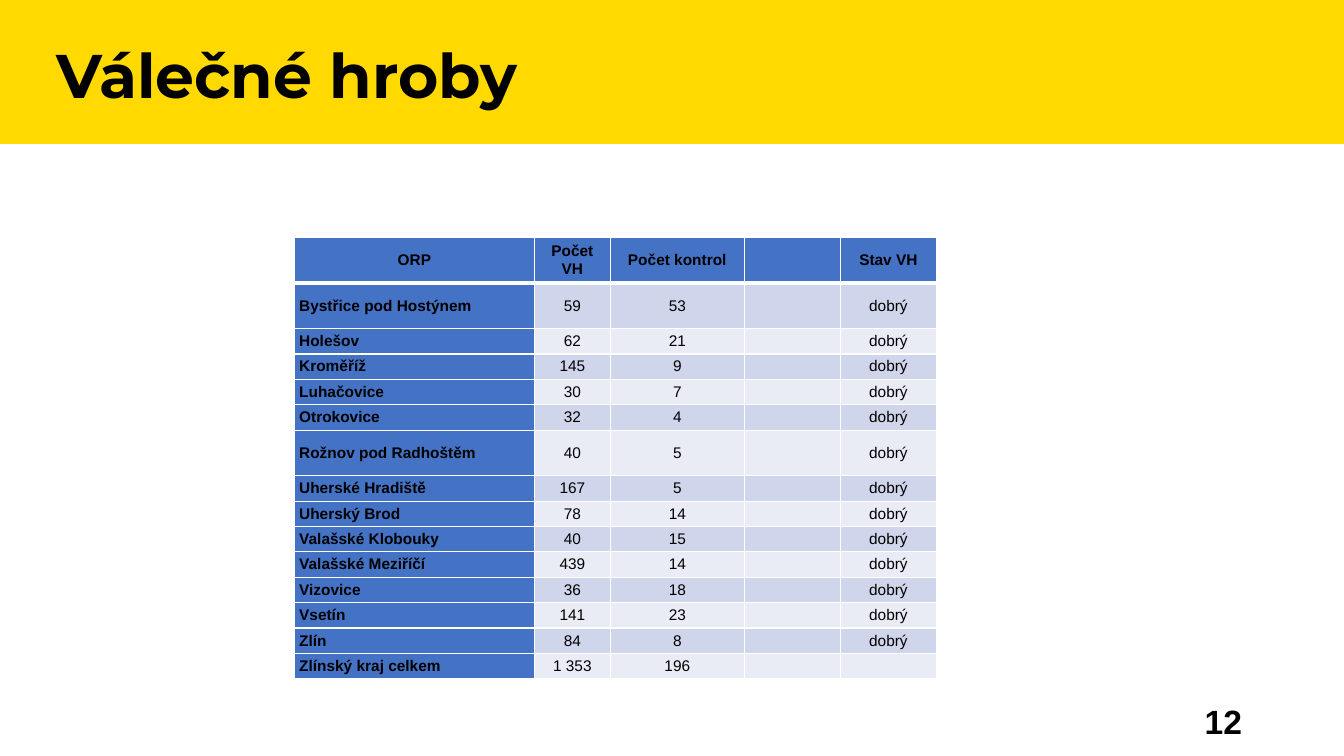
from dataclasses import dataclass

from lxml.etree import SubElement
from pptx import Presentation
from pptx.dml.color import RGBColor
from pptx.enum.shapes import MSO_SHAPE
from pptx.enum.text import MSO_ANCHOR, MSO_AUTO_SIZE, PP_ALIGN
from pptx.oxml.ns import qn
from pptx.util import Cm, Pt


@dataclass(frozen=True)
class Theme:
    yellow: str = "FFD900"
    black: str = "000000"
    white: str = "FFFFFF"
    blue: str = "4472C4"
    bands: tuple = ("CFD5EA", "E9EBF5")
    title_font: str = "Montserrat"
    body_font: str = "Arial"
    title_size: int = 44
    number_size: int = 24
    table_size: int = 11
    thin_border: int = 1
    header_border: int = 3


THEME = Theme()

HEADINGS = ("ORP", "Počet VH", "Počet kontrol", "", "Stav VH")
GRAVES = (
    ("Bystřice pod Hostýnem", "59", "53"),
    ("Holešov", "62", "21"),
    ("Kroměříž", "145", "9"),
    ("Luhačovice", "30", "7"),
    ("Otrokovice", "32", "4"),
    ("Rožnov pod Radhoštěm", "40", "5"),
    ("Uherské Hradiště", "167", "5"),
    ("Uherský Brod", "78", "14"),
    ("Valašské Klobouky", "40", "15"),
    ("Valašské Meziříčí", "439", "14"),
    ("Vizovice", "36", "18"),
    ("Vsetín", "141", "23"),
    ("Zlín", "84", "8"),
)
TOTAL = ("Zlínský kraj celkem", "1 353", "196", "", "")
COLUMN_WIDTHS = (6.05, 1.91, 3.38, 2.42, 2.42)
TALL_ROWS = (0, 1, 6)


def format_text(paragraph, font_name, size, bold, align):
    paragraph.alignment = align
    for run in paragraph.runs:
        run.font.name = font_name
        run.font.size = Pt(size)
        run.font.bold = bold
        run.font.color.rgb = RGBColor.from_string(THEME.black)


def add_heading(slide, left, top, width, height, text):
    # Yellow band behind the title
    band = slide.shapes.add_shape(
        MSO_SHAPE.RECTANGLE, Cm(left), Cm(top), Cm(width), Cm(height))
    band.shadow.inherit = False
    band.fill.solid()
    band.fill.fore_color.rgb = RGBColor.from_string(THEME.yellow)
    band.line.fill.background()

    # Title, brought in front of the band
    title = slide.shapes.title
    band._element.addnext(title._element)
    title.left, title.top = Cm(left + 1.17), Cm(top + 1.02)
    title.width, title.height = Cm(width - 2.57), Cm(height - 1.04)
    frame = title.text_frame
    frame.text = text
    frame.auto_size = MSO_AUTO_SIZE.NONE
    frame.vertical_anchor = MSO_ANCHOR.TOP
    frame.paragraphs[0].line_spacing = 0.9
    format_text(frame.paragraphs[0], THEME.title_font, THEME.title_size,
                True, PP_ALIGN.LEFT)


def set_border(cell, side, points):
    border = SubElement(cell._tc.get_or_add_tcPr(), qn(f"a:ln{side}"),
                        w=str(Pt(points)))
    fill = SubElement(border, qn("a:solidFill"))
    SubElement(fill, qn("a:srgbClr"), val=THEME.white)


def format_cell(cell, text, row, column):
    is_header, is_name = row == 0, column == 0
    cell.margin_left = cell.margin_right = Cm(0.12)
    cell.margin_top = cell.margin_bottom = 0
    cell.vertical_anchor = MSO_ANCHOR.MIDDLE

    paragraph = cell.text_frame.paragraphs[0]
    if text:
        paragraph.text = text
        paragraph.space_after = Pt(6)
        align = PP_ALIGN.LEFT if is_name and not is_header else PP_ALIGN.CENTER
        format_text(paragraph, THEME.body_font, THEME.table_size,
                    is_header or is_name, align)
    else:
        # Keeps an empty cell from stretching its row
        SubElement(paragraph._p, qn("a:endParaRPr"),
                   sz=str(THEME.table_size * 100))

    # Borders come before the fill in the cell properties
    thick_side = {0: "B", 1: "T"}.get(row)
    for side in "LRTB":
        set_border(cell, side, THEME.header_border if side == thick_side
                   else THEME.thin_border)
    color = THEME.blue if is_header or is_name else THEME.bands[(row - 1) % 2]
    cell.fill.solid()
    cell.fill.fore_color.rgb = RGBColor.from_string(color)


def add_graves_table(slide, left, top, width, height):
    rows = [HEADINGS, *((*grave, "", "dobrý") for grave in GRAVES), TOTAL]
    table = slide.shapes.add_table(
        len(rows), len(HEADINGS), Cm(left), Cm(top), Cm(width), Cm(height)).table
    table.first_row = table.horz_banding = False
    for column, column_width in zip(table.columns, COLUMN_WIDTHS):
        column.width = Cm(column_width)
    for index, texts in enumerate(rows):
        table.rows[index].height = Cm(1.15 if index in TALL_ROWS else 0.64)
        for column, text in enumerate(texts):
            format_cell(table.cell(index, column), text, index, column)


def add_page_number(slide, left, top, width, height, number):
    box = slide.shapes.add_textbox(Cm(left), Cm(top), Cm(width), Cm(height))
    frame = box.text_frame
    frame.word_wrap = True
    frame.vertical_anchor = MSO_ANCHOR.MIDDLE
    frame.text = number
    format_text(frame.paragraphs[0], THEME.body_font, THEME.number_size,
                True, PP_ALIGN.RIGHT)


def main():
    presentation = Presentation()
    presentation.slide_width, presentation.slide_height = Cm(33.87), Cm(19.05)
    title_only = presentation.slide_layouts[5]
    slide = presentation.slides.add_slide(title_only)
    add_heading(slide, 0, 0, 33.87, 3.63, "Válečné hroby")
    add_graves_table(slide, 7.42, 5.98, sum(COLUMN_WIDTHS), 11.1)
    add_page_number(slide, 23.93, 17.65, 7.62, 1.02, "12")
    presentation.save("out.pptx")


if __name__ == "__main__":
    main()
